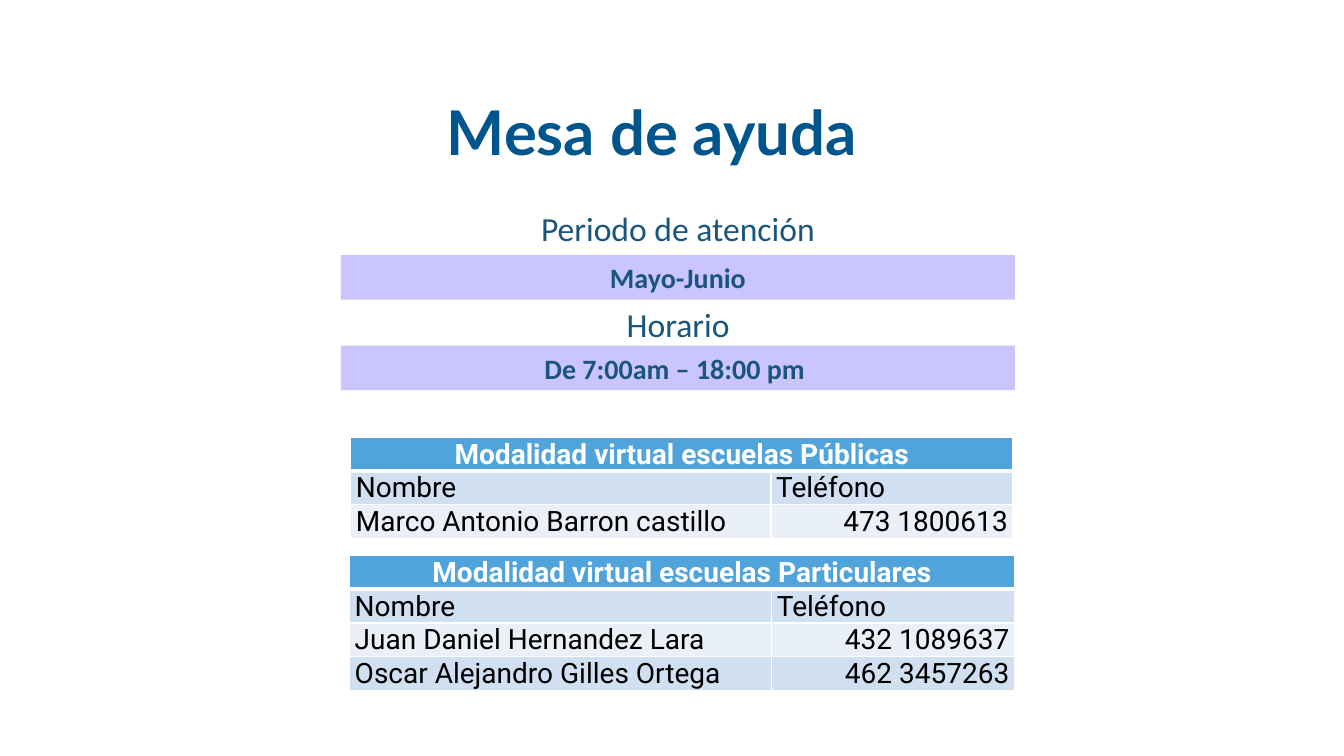
from lxml.etree import SubElement
from pptx import Presentation
from pptx.dml.color import RGBColor
from pptx.enum.shapes import MSO_SHAPE
from pptx.enum.text import MSO_ANCHOR, MSO_AUTO_SIZE, PP_ALIGN
from pptx.oxml.ns import qn
from pptx.util import Cm, Pt

TITLE_BLUE = RGBColor(0x00, 0x55, 0x8C)
TEXT_BLUE = RGBColor(0x1A, 0x55, 0x7C)
LILAC = RGBColor(0xCB, 0xC5, 0xFF)
HEADER_BLUE = RGBColor(0x51, 0xA4, 0xDB)
DARK_BAND = RGBColor(0xD0, 0xE0, 0xF1)
LIGHT_BAND = RGBColor(0xE9, 0xF0, 0xF8)
WHITE = RGBColor(0xFF, 0xFF, 0xFF)
BLACK = RGBColor(0x00, 0x00, 0x00)

ROW_HEIGHT = 0.85


def write(frame, text, size=20, font="Calibri", color=TEXT_BLUE, bold=False,
          align=PP_ALIGN.CENTER, spacing=None):
    para = frame.paragraphs[0]
    para.alignment = align
    if spacing:
        para.line_spacing = spacing
    span = para.add_run()
    span.text = text
    span.font.size = Pt(size)
    span.font.name = font
    span.font.bold = bold
    span.font.color.rgb = color


def set_margins(target, horizontal, vertical):
    target.margin_left = target.margin_right = Cm(horizontal)
    target.margin_top = target.margin_bottom = Cm(vertical)


def set_title(page, text):
    title = page.shapes.title
    title.left, title.top = Cm(10.97), Cm(2.44)
    title.width, title.height = Cm(10.92), Cm(1.96)
    frame = title.text_frame
    frame.auto_size = MSO_AUTO_SIZE.NONE
    frame.vertical_anchor = MSO_ANCHOR.MIDDLE
    set_margins(frame, 0.25, 0.25)
    write(frame, text, size=44, font="Lato", color=TITLE_BLUE, bold=True,
          spacing=0.9)


def add_label(page, text, left, top, width):
    box = page.shapes.add_textbox(Cm(left), Cm(top), Cm(width), Cm(1.37))
    frame = box.text_frame
    frame.word_wrap = True
    set_margins(frame, 0.33, 0.18)
    write(frame, text, size=24)


def add_bar(page, text, top):
    bar = page.shapes.add_shape(MSO_SHAPE.RECTANGLE, Cm(8.59), Cm(top),
                                Cm(16.99), Cm(1.12))
    bar.shadow.inherit = False
    bar.fill.solid()
    bar.fill.fore_color.rgb = LILAC
    bar.line.fill.background()
    bar.text_frame.word_wrap = True
    write(bar.text_frame, text, bold=True)


def set_borders(cell, **widths):
    """Draw white borders; widths in points by side: L, R, T, B."""
    properties = cell._tc.get_or_add_tcPr()
    for position, side in enumerate("LRTB"):
        line = SubElement(properties, qn(f"a:ln{side}"),
                          w=str(Pt(widths.get(side, 1))))
        fill = SubElement(line, qn("a:solidFill"))
        SubElement(fill, qn("a:srgbClr"), val=str(WHITE))
        properties.insert(position, line)


def format_cell(cell, row):
    set_margins(cell, 0.13, 0)
    cell.vertical_anchor = MSO_ANCHOR.BOTTOM
    cell.fill.solid()
    bands = (LIGHT_BAND, DARK_BAND)
    cell.fill.fore_color.rgb = HEADER_BLUE if row == 0 else bands[row % 2]
    set_borders(cell, T=3 if row == 1 else 1, B=3 if row == 0 else 1)


def add_contacts(page, heading, contacts, left, top, columns):
    rows = [("Nombre", "Teléfono"), *contacts]
    count = len(rows) + 1
    table = page.shapes.add_table(count, 2, Cm(left), Cm(top),
                                  Cm(sum(columns)),
                                  Cm(count * ROW_HEIGHT)).table
    for column, width in zip(table.columns, columns):
        column.width = Cm(width)
    for number, row in enumerate(table.rows):
        row.height = Cm(ROW_HEIGHT)
        for cell in row.cells:
            format_cell(cell, number)

    # Heading across both columns
    table.cell(0, 0).merge(table.cell(0, 1))
    write(table.cell(0, 0).text_frame, heading, font="Roboto", color=WHITE,
          bold=True)

    # Column names and contacts; phone numbers to the right
    for number, values in enumerate(rows, start=1):
        for column, text in enumerate(values):
            is_phone = number > 1 and column == 1
            write(table.cell(number, column).text_frame, text, font="Roboto",
                  color=BLACK,
                  align=PP_ALIGN.RIGHT if is_phone else PP_ALIGN.LEFT)


def main():
    deck = Presentation()
    deck.slide_width, deck.slide_height = Cm(33.87), Cm(19.05)
    page = deck.slides.add_slide(deck.slide_layouts[5])

    set_title(page, "Mesa de ayuda")

    # Period and opening hours
    add_label(page, "Periodo de atención", 12.73, 5.05, 8.71)
    add_bar(page, "Mayo-Junio", 6.43)
    add_label(page, "Horario", 15.16, 7.49, 3.86)
    add_bar(page, "De 7:00am – 18:00 pm ", 8.71)

    # Contact tables
    add_contacts(page, "Modalidad virtual escuelas Públicas",
                 [("Marco Antonio Barron castillo", "473 1800613")],
                 8.84, 11.02, (10.59, 6.1))
    add_contacts(page, "Modalidad virtual escuelas Particulares",
                 [("Juan Daniel Hernandez Lara", "432 1089637"),
                  ("Oscar Alejandro Gilles Ortega", "462 3457263")],
                 8.81, 14, (10.64, 6.12))

    deck.save("out.pptx")


if __name__ == "__main__":
    main()
